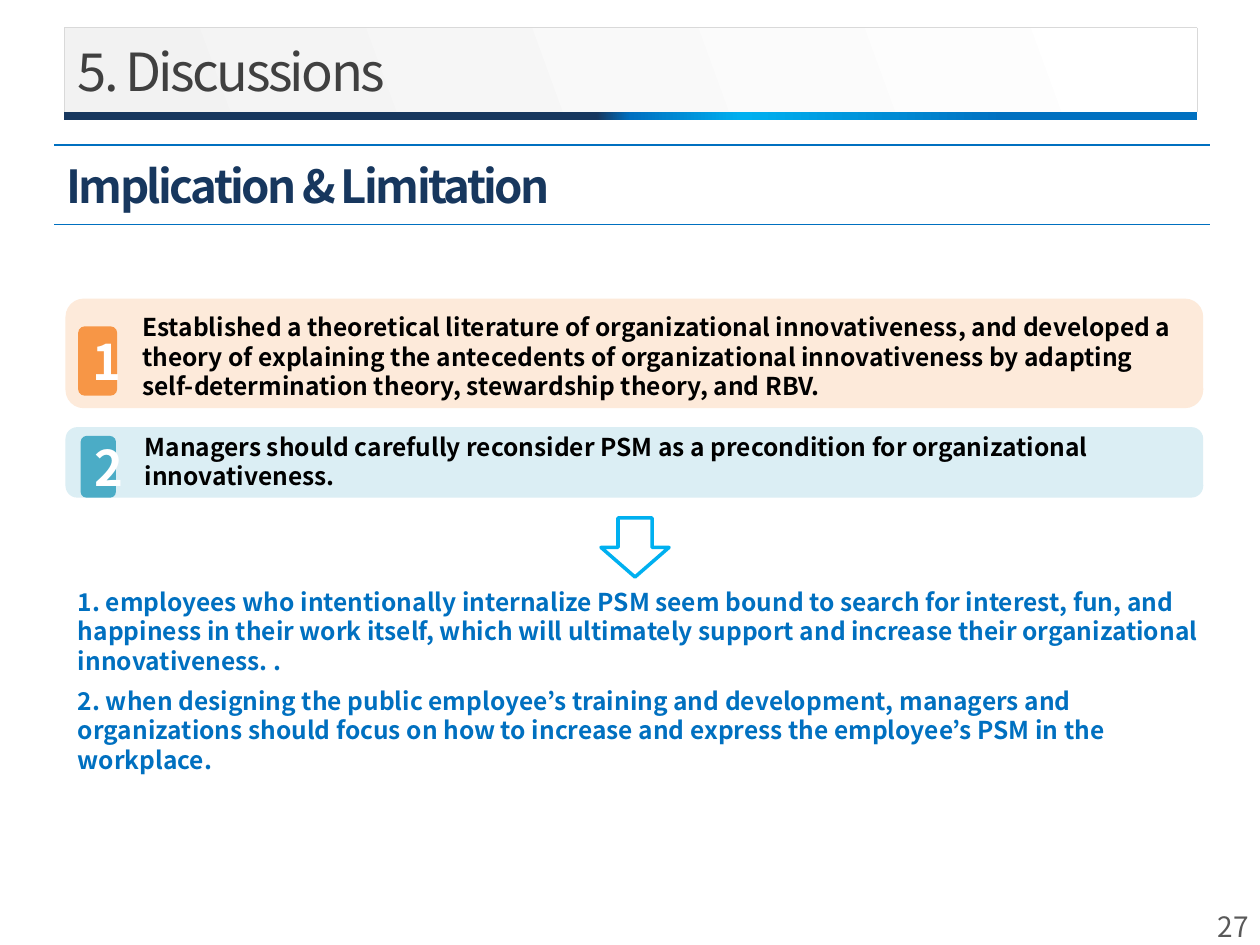
from copy import deepcopy

from pptx import Presentation
from pptx.dml.color import RGBColor as RGB
from pptx.enum.shapes import MSO_CONNECTOR as LINK, MSO_SHAPE as FORM
from pptx.enum.text import MSO_ANCHOR as ANCHOR, PP_ALIGN as ALIGN
from pptx.oxml.ns import qn
from pptx.util import Inches, Pt

FONT = "Noto Sans CJK KR"
HUES = {
    "navy": "17375E", "blue": "0070C0", "sky": "00B0F0",
    "pale": "F2F2F2", "edge": "D9D9D9", "white": "FFFFFF",
    "black": "000000", "title": "404040", "page": "595959",
    "peach": "FDEADA", "orange": "F79646", "ice": "DBEEF4", "teal": "4BACC6",
}
ITEMS = [
    ("1", "Established a theoretical literature of organizational innovativeness, "
     "and developed a theory of explaining the antecedents of organizational "
     "innovativeness by adapting self-determination theory, stewardship theory, "
     "and RBV.", "peach", "orange",
     (0.52, 2.37, 9.03, 0.87), (0.1, 0.22, 0.31, 0.55), (0.51, 0.06)),
    ("2", "Managers should carefully reconsider PSM as a precondition for "
     "organizational innovativeness.", "ice", "teal",
     (0.52, 3.39, 9.03, 0.56), (0.12, 0.07, 0.28, 0.49), (0.53, -0.01)),
]
NOTES = [
    "1. employees who intentionally internalize PSM seem bound to search for "
    "interest, fun, and happiness in their work itself, which will ultimately "
    "support and increase their organizational innovativeness. .",
    "2. when designing the public employee’s training and development, managers "
    "and organizations should focus on how to increase and express the "
    "employee’s PSM in the workplace.",
]


def hue(name):
    return RGB.from_string(HUES[name])


def write(shape, *paras, size=14, color="black", bold=True, align=ALIGN.LEFT,
          after=0, lead=None, track=0, wrap=True, anchor=ANCHOR.TOP):
    frame = shape.text_frame
    frame.word_wrap = wrap
    frame.vertical_anchor = anchor
    for i, text in enumerate(paras):
        para = frame.paragraphs[0] if i == 0 else frame.add_paragraph()
        para.alignment = align
        para.space_after = Pt(after)
        if lead:
            para.line_spacing = lead
        run = para.add_run()
        run.text = text
        font = run.font
        font.name, font.size, font.bold = FONT, Pt(size), bold
        font.color.rgb = hue(color)
        if track:
            run._r.get_or_add_rPr().set("spc", str(int(track * 100)))


def label(slide, box, *paras, **style):
    shape = slide.shapes.add_textbox(*map(Inches, box))
    write(shape, *paras, **style)


def block(slide, form, box, fill=None):
    shape = slide.shapes.add_shape(form, *map(Inches, box))
    shape.shadow.inherit = False
    shape.line.fill.background()
    if fill:
        shape.fill.solid()
        shape.fill.fore_color.rgb = hue(fill)
    else:
        shape.fill.background()
    return shape


def blend(shape, *stops, angle=0):
    """Fill the shape with a gradient of (share, colour) stops."""
    fill = shape.fill
    fill.gradient()
    fill.gradient_angle = angle
    group = shape._element.spPr.find(".//" + qn("a:gsLst"))
    while len(group) < len(stops):
        group.append(deepcopy(group[0]))
    for stop, (share, color) in zip(fill.gradient_stops, stops):
        stop.position = share
        stop.color.rgb = hue(color)


def rule(slide, start, end, color, width):
    line = slide.shapes.add_connector(LINK.STRAIGHT, *map(Inches, start + end))
    line.line.color.rgb = hue(color)
    line.line.width = Pt(width)
    props = line._element.spPr
    props.append(props.makeelement(qn("a:effectLst"), {}))


def header(slide, box, text):
    x, y, w, h = box
    bar = 0.06
    panel = block(slide, FORM.RECTANGLE, (x, y, w, h - bar))
    blend(panel, (0, "pale"), (1, "white"), angle=20)
    strip = block(slide, FORM.RECTANGLE, (x, y + h - bar, w, bar))
    blend(strip, (0.47, "navy"), (0.5, "blue"), (0.6, "sky"), (0.83, "blue"))
    rule(slide, (x, y), (x + w, y), "edge", 0.25)
    for side in (x, x + w):
        rule(slide, (side, y), (side, y + h - bar), "edge", 0.5)
    label(slide, (x + 0.01, y + 0.04, 3.27, 0.61), text, size=30,
          color="title", bold=False, track=-1.5, wrap=False)


def heading(slide, box, text):
    x, y, w, h = box
    for level in (y, y + h):
        rule(slide, (x, level), (x + w, level), "blue", 0.75)
    label(slide, (x, y + 0.17, w, 0.41), text, size=26, color="navy",
          lead=0.7, after=6, track=-1.5)


def card(slide, mark, text, fill, accent, box, badge, inset):
    """Place badge and text by their offsets from the card's corner."""
    x, y, w, h = box
    dx, dy, bw, bh = badge
    tx, ty = inset
    block(slide, FORM.ROUNDED_RECTANGLE, box, fill)
    label(slide, (x + tx, y + ty, 8.5, h - ty), text)
    tile = block(slide, FORM.ROUNDED_RECTANGLE, (x + dx, y + dy, bw, bh), accent)
    write(tile, mark, size=28, color="white", align=ALIGN.CENTER,
          anchor=ANCHOR.MIDDLE)


def arrow(slide, box):
    shape = block(slide, FORM.DOWN_ARROW, box)
    shape.line.color.rgb = hue("sky")
    shape.line.width = Pt(2)


def main():
    deck = Presentation()
    deck.slide_width, deck.slide_height = Inches(10), Inches(7.5)
    slide = deck.slides.add_slide(deck.slide_layouts[6])
    header(slide, (0.51, 0.22, 8.99, 0.73), "5. Discussions")
    heading(slide, (0.43, 1.15, 9.17, 0.63), "Implication & Limitation")
    arrow(slide, (4.77, 4.11, 0.54, 0.47))
    for item in ITEMS:
        card(slide, *item)
    label(slide, (0.52, 4.61, 9.41, 1.36), *NOTES, color="blue", after=6)
    label(slide, (9.55, 7.17, 0.46, 0.37), "27", size=16, color="page",
          bold=False, align=ALIGN.RIGHT, wrap=False)
    deck.save("out.pptx")


if __name__ == "__main__":
    main()
